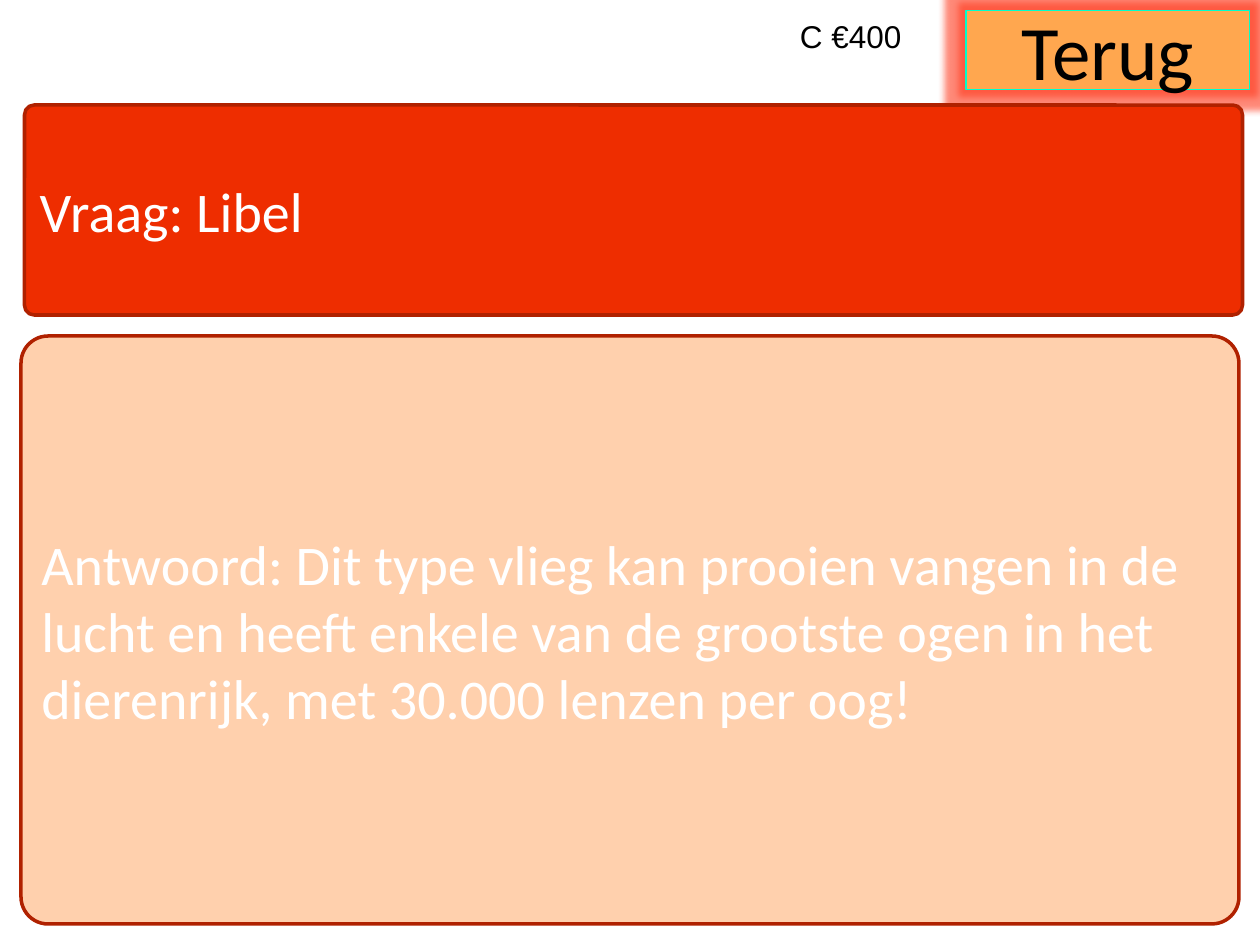
from dataclasses import dataclass

from lxml.etree import SubElement
from pptx import Presentation
from pptx.dml.color import RGBColor
from pptx.enum.shapes import MSO_SHAPE
from pptx.enum.text import MSO_ANCHOR, PP_ALIGN
from pptx.oxml.ns import qn
from pptx.util import Pt


@dataclass(frozen=True)
class Theme:
    black: str = "000000"
    white: str = "FFFFFF"
    button: str = "FFA74F"
    button_line: str = "00FFCC"
    glow: str = "FF3B1F"
    question: str = "EE2D00"
    answer: str = "FFD0AD"
    card_line: str = "B02100"
    body_font: str = "Calibri"
    label_font: str = "Arial"
    button_size: int = 44
    card_size: int = 32
    label_size: int = 18


THEME = Theme()


def color(value):
    return RGBColor.from_string(value)


def write_text(box, text, font, size, text_color, align=PP_ALIGN.LEFT):
    box.text_frame.word_wrap = True
    para = box.text_frame.paragraphs[0]
    para.alignment = align
    span = para.add_run()
    span.text = text
    span.font.name = font
    span.font.size = Pt(size)
    span.font.color.rgb = color(text_color)


def add_box(page, kind, bounds, fill, line, line_width):
    box = page.shapes.add_shape(kind, *map(Pt, bounds))
    box.shadow.inherit = False
    box.fill.solid()
    box.fill.fore_color.rgb = color(fill)
    box.line.color.rgb = color(line)
    box.line.width = Pt(line_width)
    box.text_frame.vertical_anchor = MSO_ANCHOR.MIDDLE
    return box


def add_glow(box, radius, glow_color, opacity):
    effects = box._element.spPr.find(qn("a:effectLst"))
    glow = SubElement(effects, qn("a:glow"), rad=str(Pt(radius)))
    tint = SubElement(glow, qn("a:srgbClr"), val=glow_color)
    SubElement(tint, qn("a:alpha"), val=str(opacity * 1000))


def add_button(page, bounds, text):
    box = add_box(page, MSO_SHAPE.RECTANGLE, bounds, THEME.button, THEME.button_line, 0.75)
    add_glow(box, 8, THEME.glow, 60)
    write_text(box, text, THEME.body_font, THEME.button_size, THEME.black, PP_ALIGN.CENTER)


def add_label(page, bounds, text):
    box = page.shapes.add_textbox(*map(Pt, bounds))
    write_text(box, text, THEME.label_font, THEME.label_size, THEME.black)


def add_card(page, bounds, fill, text):
    box = add_box(page, MSO_SHAPE.ROUNDED_RECTANGLE, bounds, fill, THEME.card_line, 2)
    box.adjustments[0] = 0.046
    write_text(box, text, THEME.body_font, THEME.card_size, THEME.white)


def main():
    deck = Presentation()
    deck.slide_width, deck.slide_height = Pt(720), Pt(540)
    page = deck.slides.add_slide(deck.slide_layouts[6])
    add_button(page, (552, 6, 162, 45), "Terug")
    add_label(page, (450, 6, 102, 46), "C €400")
    add_card(
        page,
        (12, 192, 696, 336),
        THEME.answer,
        "Antwoord: Dit type vlieg kan prooien vangen in de lucht en heeft enkele "
        "van de grootste ogen in het dierenrijk, met 30.000 lenzen per oog!",
    )
    add_card(page, (14, 60, 696, 120), THEME.question, "Vraag: Libel")
    deck.save("out.pptx")


if __name__ == "__main__":
    main()
